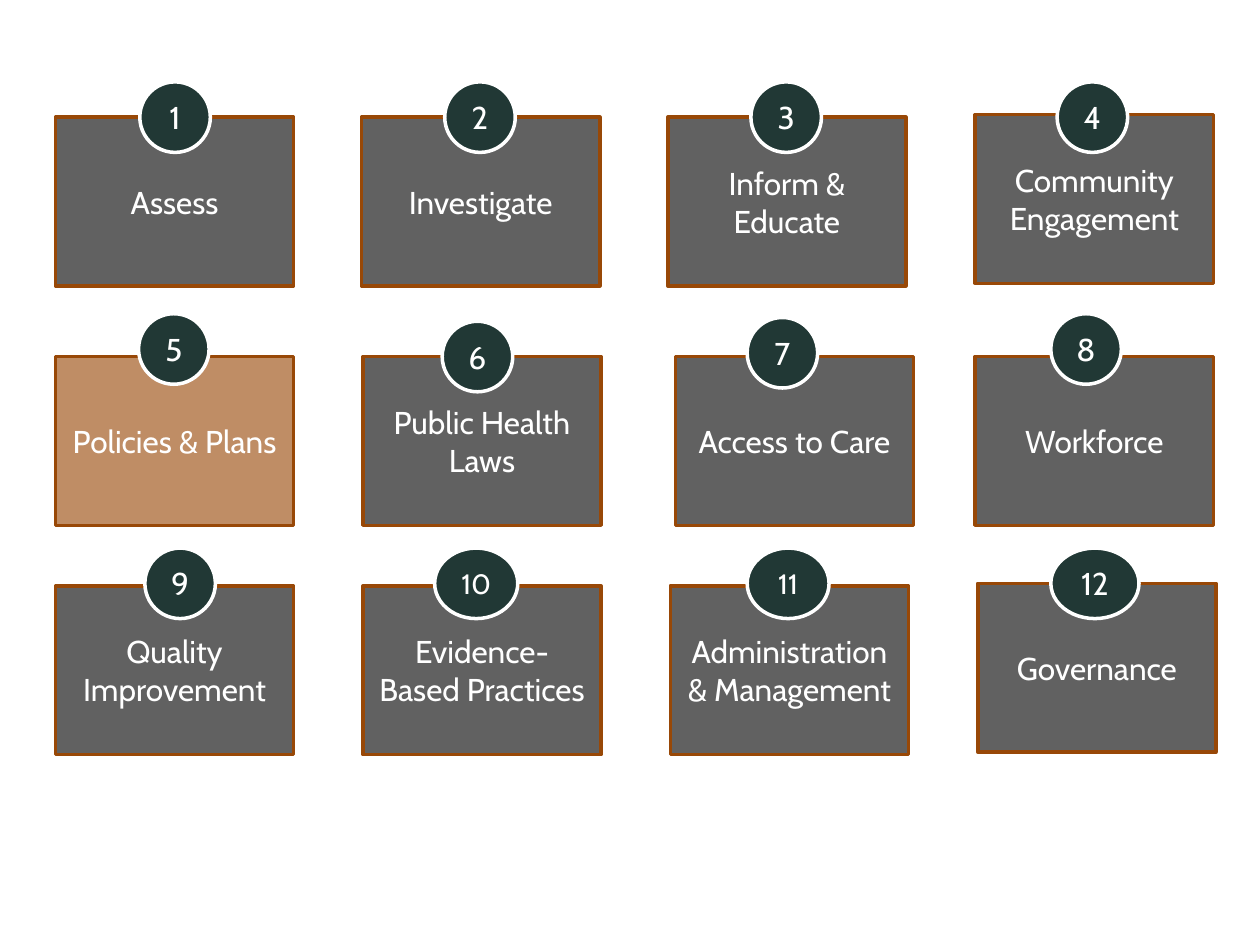
"""Build a slide with a four by three grid of numbered capability cards."""
from dataclasses import dataclass

from lxml.etree import SubElement
from pptx import Presentation
from pptx.dml.color import RGBColor
from pptx.enum.shapes import MSO_SHAPE as Preset
from pptx.enum.text import MSO_ANCHOR as Anchor, PP_ALIGN as Align
from pptx.oxml.ns import qn
from pptx.util import Inches, Pt

BLACK = RGBColor(0x00, 0x00, 0x00)
WHITE = RGBColor(0xFF, 0xFF, 0xFF)
RUST = RGBColor(0x98, 0x48, 0x07)
PINE = RGBColor(0x21, 0x38, 0x35)

FONT = "Cabin"
COLUMNS = 4
COLUMN_START, COLUMN_STEP = 0.44, 2.43
ROW_TOPS = (0.93, 2.83, 4.65)
CARD_WIDTH, CARD_HEIGHT = 1.89, 1.34
BADGE_SIZE = 0.56
BADGE_LEFT, BADGE_RISE = 0.66, 0.28
CARD_OPACITY = 62


@dataclass(frozen=True)
class Card:
    """A label with small shifts of its card and badge from the grid."""

    label: str
    shift: tuple[float, float] = (0, 0)
    badge_shift: tuple[float, float] = (0, 0)
    badge_width: float = BADGE_SIZE
    badge_points: int = 18
    fill: RGBColor = BLACK


CARDS = (
    Card("Assess", badge_shift=(0.01, 0)),
    Card("Investigate"),
    Card("Inform & Educate"),
    Card("Community Engagement", shift=(0.01, -0.02)),
    Card("Policies & Plans", badge_shift=(0, -0.06), fill=RUST),
    Card("Public Health Laws", shift=(0.01, 0), badge_shift=(-0.02, 0)),
    Card("Access to Care", shift=(0.06, 0), badge_shift=(-0.03, -0.03)),
    Card("Workforce", shift=(0.01, 0), badge_shift=(-0.05, -0.06)),
    Card("Quality Improvement", badge_shift=(0.05, -0.02)),
    Card("Evidence-Based Practices", (0.01, 0), (-0.08, -0.02), 0.66, 16),
    Card("Administration & Management", (0.02, 0), (-0.03, -0.02), 0.65, 16),
    Card("Governance", (0.03, -0.02), (-0.05, -0.02), 0.70),
)


def write_text(shape, text: str, *, points: int = 18, wrap: bool = True) -> None:
    """Write centred white text into a shape."""
    frame = shape.text_frame
    frame.word_wrap = wrap
    frame.vertical_anchor = Anchor.MIDDLE
    para = frame.paragraphs[0]
    para.alignment = Align.CENTER
    span = para.add_run()
    span.text = text
    span.font.name = FONT
    span.font.size = Pt(points)
    span.font.color.rgb = WHITE


def add_box(page, preset: Preset, area: tuple[float, float, float, float],
            fill: RGBColor, line: RGBColor, opacity: int = 100):
    """Add a flat filled shape with a two-point outline."""
    box = page.shapes.add_shape(preset, *(Inches(length) for length in area))
    box.shadow.inherit = False
    box.fill.solid()
    box.fill.fore_color.rgb = fill
    if opacity < 100:
        color = box.fill._xPr.find(f"{qn('a:solidFill')}/{qn('a:srgbClr')}")
        SubElement(color, qn("a:alpha"), val=str(opacity * 1000))
    box.line.color.rgb = line
    box.line.width = Pt(2)
    return box


def grid_corner(index: int) -> tuple[float, float]:
    """Return the left and top of a grid cell."""
    row, column = divmod(index, COLUMNS)
    return COLUMN_START + column * COLUMN_STEP, ROW_TOPS[row]


def add_card(page, index: int, card: Card) -> None:
    """Draw the labelled rectangle of a card."""
    left, top = grid_corner(index)
    area = (left + card.shift[0], top + card.shift[1], CARD_WIDTH, CARD_HEIGHT)
    box = add_box(page, Preset.RECTANGLE, area, card.fill, RUST, CARD_OPACITY)
    write_text(box, card.label)


def add_badge(page, index: int, card: Card) -> None:
    """Draw the numbered ellipse on the top edge of a card."""
    left, top = grid_corner(index)
    area = (left + BADGE_LEFT + card.badge_shift[0],
            top - BADGE_RISE + card.badge_shift[1],
            card.badge_width, BADGE_SIZE)
    badge = add_box(page, Preset.OVAL, area, PINE, WHITE)
    write_text(badge, str(index + 1), points=card.badge_points, wrap=False)


def main() -> None:
    """Build and save the deck."""
    deck = Presentation()
    deck.slide_width, deck.slide_height = Inches(10), Inches(7.5)
    page = deck.slides.add_slide(deck.slide_layouts[6])
    for draw in (add_card, add_badge):
        for index, card in enumerate(CARDS):
            draw(page, index, card)
    deck.save("out.pptx")


if __name__ == "__main__":
    main()
